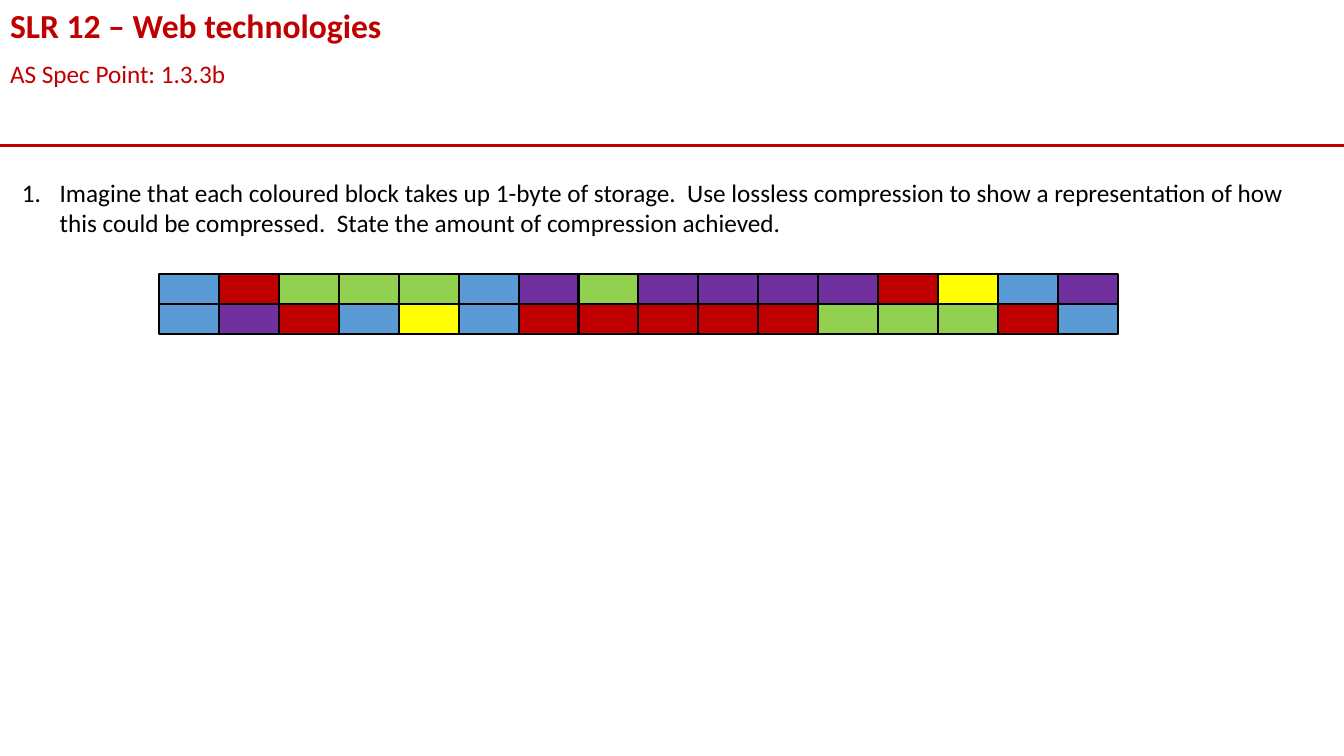
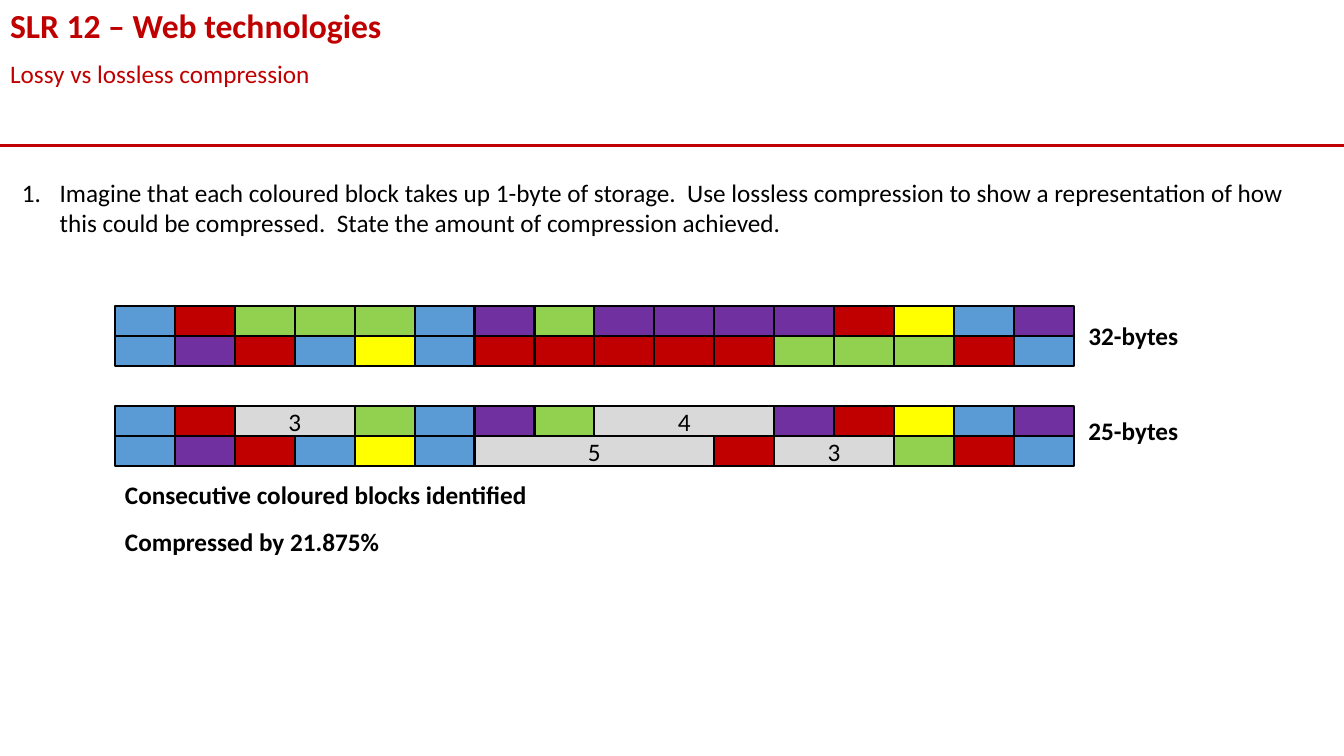
import dataclasses
import itertools

import lxml.etree
import pptx
import pptx.dml.color
import pptx.enum.shapes
import pptx.enum.text
import pptx.oxml.ns
import pptx.presentation
import pptx.slide
import pptx.text.text
import pptx.util

Cm = pptx.util.Cm
Pt = pptx.util.Pt
Align = pptx.enum.text.PP_ALIGN
Anchor = pptx.enum.text.MSO_ANCHOR

COLORS = {
    "accent": "C00000",
    "text": "000000",
    "outline": "000000",
    "count": "D9D9D9",
    "B": "5B9BD5",
    "R": "C00000",
    "G": "92D050",
    "P": "7030A0",
    "Y": "FFFF00",
}
FONT = "Calibri"
SLIDE_W, SLIDE_H = 33.87, 19.05
RULE_Y = 3.66
BLOCK_W, BLOCK_H = 1.51, 0.75
NUMBER_INDENT = 0.95
MIN_RUN = 3

TITLE = "SLR 12 – Web technologies"
QUESTION = (
    "Imagine that each coloured block takes up 1-byte of storage.  "
    "Use lossless compression to show a representation of how this could be compressed.  "
    "State the amount of compression achieved."
)
PIXEL_ROWS = ["BRGGGBPGPPPPRYBP", "BPRBYBRRRRRGGGRB"]


@dataclasses.dataclass(frozen=True)
class Box:
    left: float
    top: float
    width: float
    height: float


@dataclasses.dataclass(frozen=True)
class Block:
    color: str
    span: int = 1
    label: str = ""


@dataclasses.dataclass(frozen=True)
class Note:
    text: str
    box: Box


PLACEHOLDERS = {
    0: Box(0, 0, SLIDE_W, 1.28),
    1: Box(0, 1.35, SLIDE_W, 1.02),
    2: Box(0.3, 4.34, 33.3, 1.8),
}
NOTES = [
    Note("32-bytes", Box(27.18, 7.95, 4.67, 1.02)),
    Note("25-bytes", Box(27.18, 10.34, 4.67, 1.02)),
    Note("Consecutive coloured blocks identified", Box(2.9, 11.96, 11, 1.02)),
    Note("Compressed by 21.875%", Box(2.9, 13.13, 11, 1.02)),
]


def rgb(name: str) -> pptx.dml.color.RGBColor:
    return pptx.dml.color.RGBColor.from_string(COLORS[name])


def write_text(
    tf: pptx.text.text.TextFrame,
    text: str,
    *,
    size: float = 18,
    color: str = "text",
    bold: bool = False,
    align: Align = Align.LEFT,
    anchor: Anchor = Anchor.TOP,
    numbered: bool = False,
) -> None:
    tf.word_wrap = True
    tf.auto_size = pptx.enum.text.MSO_AUTO_SIZE.NONE
    tf.vertical_anchor = anchor
    p = tf.paragraphs[0]
    indent = Cm(NUMBER_INDENT) if numbered else 0
    p_pr = p._p.get_or_add_pPr()
    p_pr.set("marL", str(indent))
    p_pr.set("indent", str(-indent))
    tag = "a:buAutoNum" if numbered else "a:buNone"
    bullet = lxml.etree.SubElement(p_pr, pptx.oxml.ns.qn(tag))
    if numbered:
        bullet.set("type", "arabicPeriod")
    p.alignment = align
    p.space_before = Pt(0)
    r = p.add_run()
    r.text = text
    r.font.name = FONT
    r.font.size = Pt(size)
    r.font.bold = bold
    r.font.color.rgb = rgb(color)


def prepare_layout(prs: pptx.presentation.Presentation) -> pptx.slide.SlideLayout:
    layout = prs.slide_layouts.get_by_name("Two Content")
    for sp in layout.placeholders:
        box = PLACEHOLDERS.get(sp.placeholder_format.idx)
        if box:
            sp.left, sp.top = Cm(box.left), Cm(box.top)
            sp.width, sp.height = Cm(box.width), Cm(box.height)
    return layout


def add_rule_to_layout(s: pptx.slide.Slide) -> None:
    rule = s.shapes.add_connector(
        pptx.enum.shapes.MSO_CONNECTOR.STRAIGHT,
        Cm(0), Cm(RULE_Y), Cm(SLIDE_W), Cm(RULE_Y),
    )
    rule.line.color.rgb = rgb("accent")
    rule.line.width = Pt(2.25)
    sp_pr = rule.element.find(pptx.oxml.ns.qn("p:spPr"))
    lxml.etree.SubElement(sp_pr, pptx.oxml.ns.qn("a:effectLst"))
    s.slide_layout.shapes.element.append(rule.element)


def add_question_slide(
    prs: pptx.presentation.Presentation, layout: pptx.slide.SlideLayout, subtitle: str
) -> pptx.slide.Slide:
    s = prs.slides.add_slide(layout)
    write_text(s.shapes.title.text_frame, TITLE, size=24, color="accent", bold=True)
    write_text(s.placeholders[1].text_frame, subtitle, color="accent")
    write_text(s.placeholders[2].text_frame, QUESTION, numbered=True)
    return s


def plain_row(pixels: str) -> list[Block]:
    return [Block(pixel) for pixel in pixels]


def compressed_row(pixels: str) -> list[Block]:
    blocks: list[Block] = []
    for pixel, group in itertools.groupby(pixels):
        count = len(list(group))
        if count >= MIN_RUN:
            blocks += [Block("count", count - 1, str(count)), Block(pixel)]
        else:
            blocks += [Block(pixel)] * count
    return blocks


def draw_blocks(
    s: pptx.slide.Slide, rows: list[list[Block]], left: float, top: float
) -> None:
    for row, blocks in enumerate(rows):
        column = 0
        for block in blocks:
            sp = s.shapes.add_shape(
                pptx.enum.shapes.MSO_SHAPE.RECTANGLE,
                Cm(left + column * BLOCK_W), Cm(top + row * BLOCK_H),
                Cm(block.span * BLOCK_W), Cm(BLOCK_H),
            )
            sp.shadow.inherit = False
            sp.fill.solid()
            sp.fill.fore_color.rgb = rgb(block.color)
            sp.line.color.rgb = rgb("outline")
            sp.line.width = Pt(1.5)
            if block.label:
                tf = sp.text_frame
                tf.margin_top = tf.margin_bottom = 0
                write_text(tf, block.label, align=Align.CENTER, anchor=Anchor.MIDDLE)
            column += block.span


def add_note(s: pptx.slide.Slide, note: Note) -> None:
    box = note.box
    sp = s.shapes.add_textbox(Cm(box.left), Cm(box.top), Cm(box.width), Cm(box.height))
    write_text(sp.text_frame, note.text, bold=True)


def main() -> None:
    prs = pptx.Presentation()
    prs.slide_width, prs.slide_height = Cm(SLIDE_W), Cm(SLIDE_H)
    layout = prepare_layout(prs)
    plain = [plain_row(pixels) for pixels in PIXEL_ROWS]
    compressed = [compressed_row(pixels) for pixels in PIXEL_ROWS]

    s = add_question_slide(prs, layout, "AS Spec Point: 1.3.3b")
    add_rule_to_layout(s)
    draw_blocks(s, plain, 4.01, 6.91)

    s = add_question_slide(prs, layout, "Lossy vs lossless compression")
    draw_blocks(s, plain, 2.9, 7.72)
    draw_blocks(s, compressed, 2.9, 10.24)
    for note in NOTES:
        add_note(s, note)

    prs.save("out.pptx")


if __name__ == "__main__":
    main()
